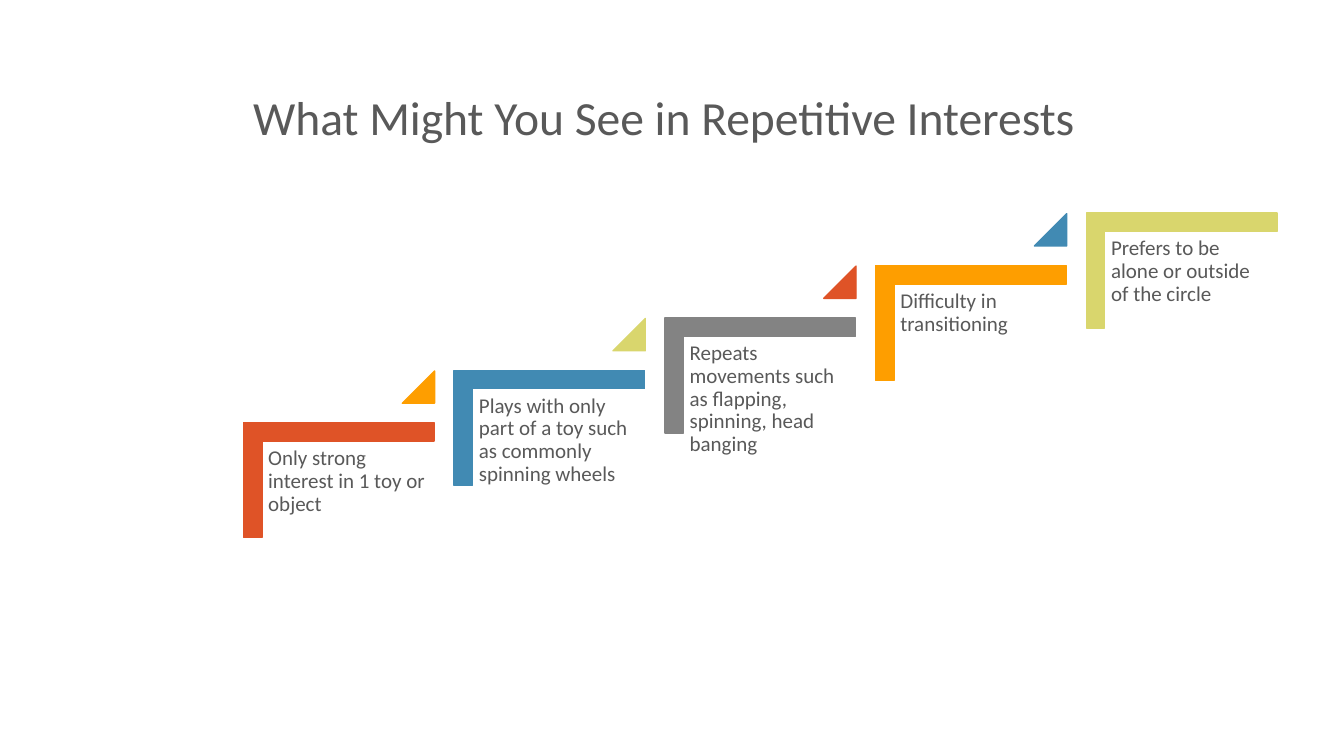
"""Build a slide with five rising steps that describe repetitive interests."""
import pptx
import pptx.dml.color
import pptx.enum.shapes
import pptx.enum.text
import pptx.util

TITLE = "What Might You See in Repetitive Interests"
STEPS = [
    ("Only strong interest in 1 toy or object", "red", "orange"),
    ("Plays with only part of a toy such as commonly spinning wheels", "blue", "lime"),
    ("Repeats movements such as flapping, spinning, head banging", "gray", "red"),
    ("Difficulty in transitioning", "orange", "blue"),
    ("Prefers to be alone or outside of the circle", "lime", None),
]
COLORS = {
    "red": "DF5327",
    "orange": "FE9E00",
    "blue": "418AB3",
    "lime": "D9D66D",
    "gray": "838383",
    "text": "595959",
}
FONT = "Calibri"
STEP_WIDTH, STEP_RISE = 2.09, 0.52
CORNER_BOX = (2.79, 3.82, 1.14, 1.89)
LABEL_BOX = (2.6, 4.38, 1.71, 1.5)
TRIANGLE_BOX = (3.99, 3.68, 0.32, 0.32)
SHAPES = pptx.enum.shapes.MSO_SHAPE


def color(name):
    return pptx.dml.color.RGBColor.from_string(COLORS[name])


def place(box, index=0):
    left, top, width, height = box
    values = (left + index * STEP_WIDTH, top - index * STEP_RISE, width, height)
    return [pptx.util.Inches(value) for value in values]


def write(frame, text, size):
    frame.text = text
    frame.word_wrap = True
    frame.auto_size = pptx.enum.text.MSO_AUTO_SIZE.NONE
    para = frame.paragraphs[0]
    para.alignment = pptx.enum.text.PP_ALIGN.LEFT
    para.line_spacing = 0.9
    font = para.runs[0].font
    font.name = FONT
    font.size = pptx.util.Pt(size)
    font.color.rgb = color("text")


def add_accent(page, kind, box, index, adjustments, fill):
    shape = page.shapes.add_shape(kind, *place(box, index))
    for position, value in enumerate(adjustments):
        shape.adjustments[position] = value
    shape.shadow.inherit = False
    shape.fill.solid()
    shape.fill.fore_color.rgb = color(fill)
    shape.line.color.rgb = color(fill)
    shape.line.width = pptx.util.Pt(1)
    return shape


def add_label(page, index, text):
    frame = page.shapes.add_textbox(*place(LABEL_BOX, index)).text_frame
    inset = pptx.util.Inches(0.06)
    frame.margin_left = frame.margin_right = inset
    frame.margin_top = frame.margin_bottom = inset
    write(frame, text, 15)


def main():
    deck = pptx.Presentation()
    deck.slide_width = pptx.util.Inches(13.33)
    deck.slide_height = pptx.util.Inches(7.5)
    page = deck.slides.add_slide(deck.slide_layouts[5])
    title = page.shapes.title
    title.left, title.top, title.width, title.height = place((2.41, 0.19, 10.25, 1.31))
    title.text_frame.vertical_anchor = pptx.enum.text.MSO_ANCHOR.BOTTOM
    write(title.text_frame, TITLE, 34)
    for index, (text, corner_color, triangle_color) in enumerate(STEPS):
        corner = add_accent(page, SHAPES.CORNER, CORNER_BOX, index,
                            (0.16, 0.16), corner_color)
        corner.rotation = 90
        add_label(page, index, text)
        if triangle_color:
            add_accent(page, SHAPES.ISOSCELES_TRIANGLE, TRIANGLE_BOX, index,
                       (1,), triangle_color)
    deck.save("out.pptx")


if __name__ == "__main__":
    main()
